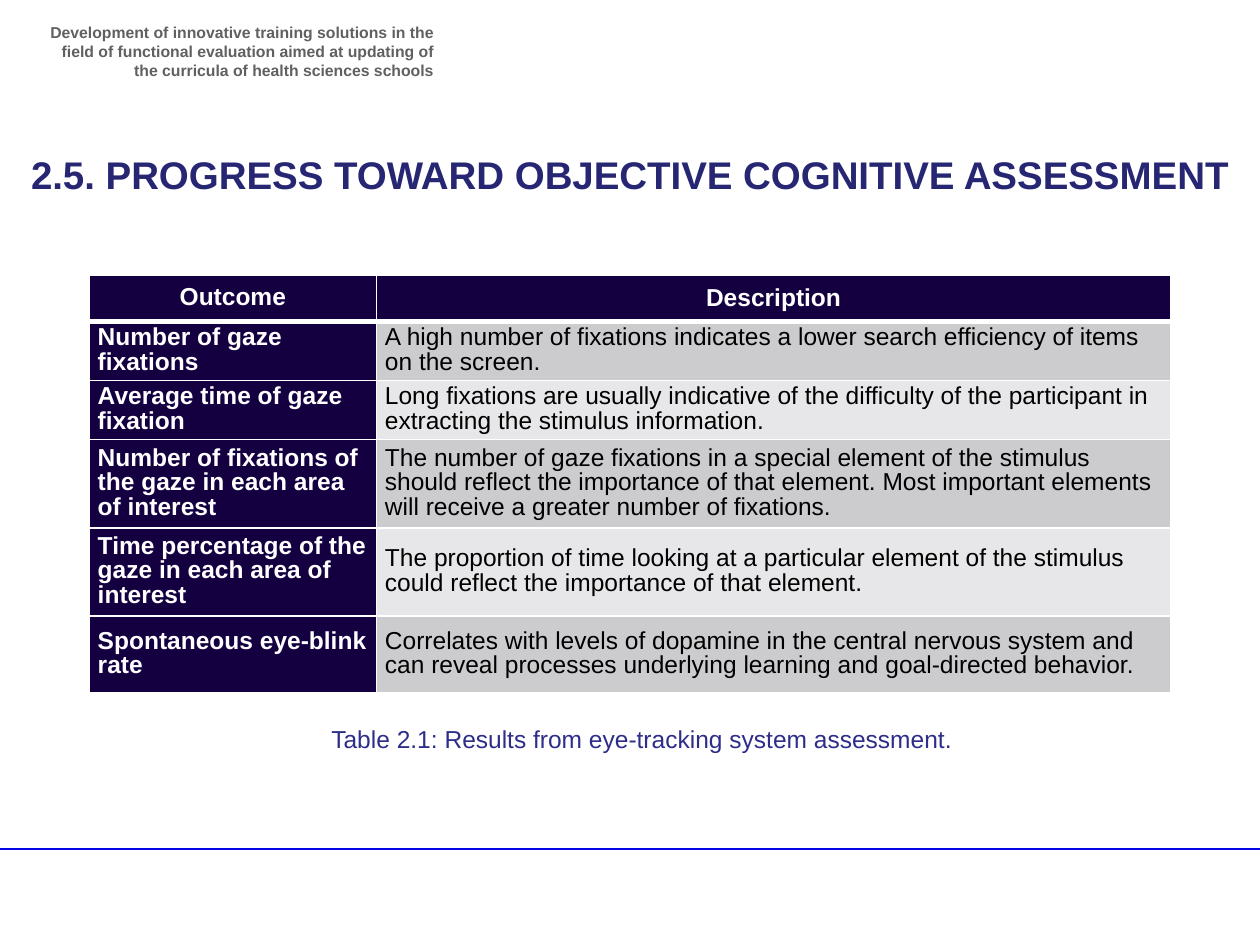
from dataclasses import dataclass

from lxml import etree
from pptx import Presentation
from pptx import util as u
from pptx.dml.color import RGBColor
from pptx.enum import shapes, text
from pptx.oxml import ns

FONT = "Arial"
NAVY, WHITE, BLACK = "140041", "FFFFFF", "000000"
BANDS = ("CCCCCF", "E7E7E9")
COLUMN_WIDTHS = (5.79, 16.01)


@dataclass
class Label:
    content: str
    box: tuple[float, float, float, float]
    size: float
    color: str
    bold: bool = False
    align: text.PP_ALIGN = text.PP_ALIGN.LEFT
    wrap: bool = True


@dataclass
class Row:
    height: float
    outcome: str
    description: str


LABELS = [
    Label("Development of innovative training solutions in the ﬁeld of functional "
          "evaluation aimed at updating of the curricula of health sciences schools",
          (0.71, 0.33, 8.28, 1.19), 9, "606060", True, text.PP_ALIGN.RIGHT),
    Label("2.5. PROGRESS TOWARD OBJECTIVE COGNITIVE ASSESSMENT",
          (0.25, 2.92, 24.9, 1.19), 22, "262673", True, text.PP_ALIGN.CENTER),
    Label("Table 2.1: Results from eye-tracking system assessment.",
          (6.43, 14.48, 13.08, 0.86), 14, "2D2D8A", wrap=False),
]

ROWS = [
    Row(0.94, "Outcome", "Description"),
    Row(1.19, "Number of gaze fixations",
        "A high number of fixations indicates a lower search efficiency of items "
        "on the screen."),
    Row(1.19, "Average time of gaze fixation",
        "Long fixations are usually indicative of the difficulty of the participant "
        "in extracting the stimulus information."),
    Row(1.78, "Number of fixations of the gaze in each area of interest",
        "The number of gaze fixations in a special element of the stimulus should "
        "reflect the importance of that element. Most important elements will "
        "receive a greater number of fixations."),
    Row(1.78, "Time percentage of the gaze in each area of interest",
        "The proportion of time looking at a particular element of the stimulus "
        "could reflect the importance of that element."),
    Row(1.54, "Spontaneous eye-blink rate",
        "Correlates with levels of dopamine in the central nervous system and can "
        "reveal processes underlying learning and goal-directed behavior."),
]


def rgb(color: str) -> RGBColor:
    return RGBColor.from_string(color)


def set_font(paragraph, size: float, color: str, bold: bool) -> None:
    font = paragraph.font
    font.name, font.size, font.bold = FONT, u.Pt(size), bold
    font.color.rgb = rgb(color)


def add_label(slide, label: Label) -> None:
    shape = slide.shapes.add_textbox(*map(u.Cm, label.box))
    frame = shape.text_frame
    frame.word_wrap = label.wrap
    paragraph = frame.paragraphs[0]
    paragraph.text = label.content
    paragraph.alignment = label.align
    set_font(paragraph, label.size, label.color, label.bold)


def add_footer_line(slide) -> None:
    line = slide.shapes.add_connector(
        shapes.MSO_CONNECTOR.STRAIGHT, u.Cm(-0.13), u.Cm(17.12), u.Cm(25.4), u.Cm(17.12))
    line.line.color.rgb = rgb("0404E6")
    line.line.width = u.Pt(1)
    etree.SubElement(line._element.spPr, ns.qn("a:effectLst"))


def set_borders(cell, top: float, bottom: float) -> None:
    """Draw white borders, with widths in points; the sides are 1 point."""
    properties = cell._tc.get_or_add_tcPr()
    for side, width in (("L", 1), ("R", 1), ("T", top), ("B", bottom)):
        border = etree.SubElement(properties, ns.qn(f"a:ln{side}"), w=str(u.Pt(width)))
        fill = etree.SubElement(border, ns.qn("a:solidFill"))
        etree.SubElement(fill, ns.qn("a:srgbClr"), val=WHITE)


def fill_cell(cell, content: str, row: int, column: int) -> None:
    is_heading = row == 0 or column == 0
    set_borders(cell, top=3 if row == 1 else 1, bottom=3 if row == 0 else 1)
    cell.fill.solid()
    cell.fill.fore_color.rgb = rgb(NAVY if is_heading else BANDS[(row - 1) % 2])
    cell.vertical_anchor = text.MSO_ANCHOR.MIDDLE
    cell.margin_left = cell.margin_right = u.Cm(0.17)
    cell.margin_top = cell.margin_bottom = 0
    paragraph = cell.text_frame.paragraphs[0]
    paragraph.text = content
    paragraph.alignment = text.PP_ALIGN.CENTER if row == 0 else text.PP_ALIGN.LEFT
    if (row, column) != (0, 1):
        paragraph.line_spacing = u.Pt(14)
    set_font(paragraph, 14, WHITE if is_heading else BLACK, is_heading)


def add_outcome_table(slide) -> None:
    table = slide.shapes.add_table(
        len(ROWS), len(COLUMN_WIDTHS), u.Cm(1.8), u.Cm(5.54),
        u.Cm(sum(COLUMN_WIDTHS)), u.Cm(sum(row.height for row in ROWS))).table
    for column, width in zip(table.columns, COLUMN_WIDTHS):
        column.width = u.Cm(width)
    for index, row in enumerate(ROWS):
        table.rows[index].height = u.Cm(row.height)
        for column, content in enumerate((row.outcome, row.description)):
            fill_cell(table.cell(index, column), content, index, column)


def main() -> None:
    presentation = Presentation()
    presentation.slide_width, presentation.slide_height = u.Cm(25.4), u.Cm(19.05)
    slide = presentation.slides.add_slide(presentation.slide_layouts[6])
    add_footer_line(slide)
    header, title, caption = LABELS
    add_label(slide, header)
    add_label(slide, title)
    add_outcome_table(slide)
    add_label(slide, caption)
    presentation.save("out.pptx")


if __name__ == "__main__":
    main()
